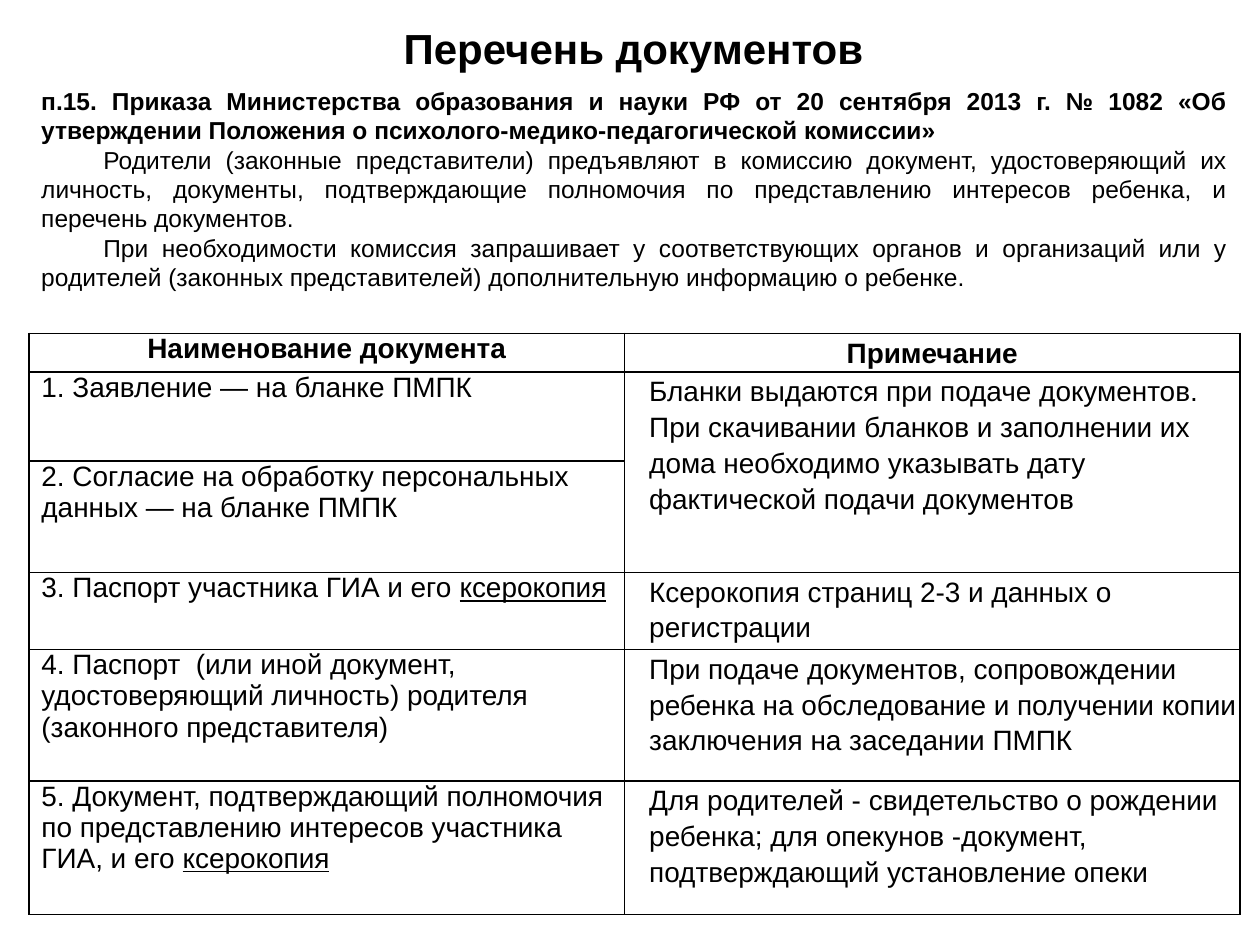
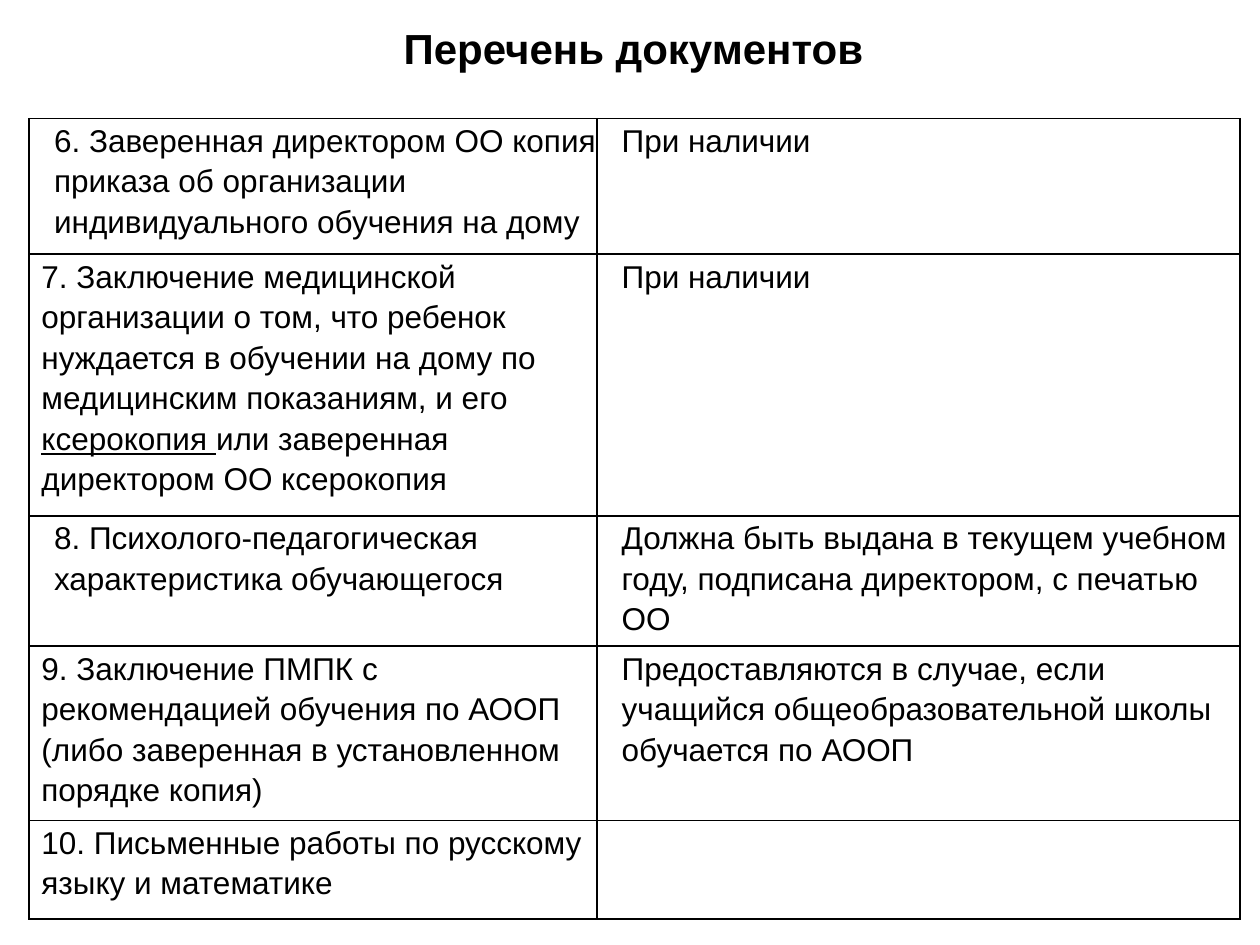
import pptx
import pptx.util
import pptx.dml.color
import pptx.enum.text
import pptx.oxml
import pptx.oxml.ns

Pt = pptx.util.Pt
ALIGN = pptx.enum.text.PP_ALIGN

COLORS = {"text": "000000", "border": "000000"}
FONT = "Arial"
TITLE = "Перечень документов"
LEFT, WIDTH = 16.5, 692
NAME_INDENT, DEEP_INDENT, NOTE_INDENT = 7.2, 14.4, 14
LINE_SPACING = 1.15

INTRO = [
    "п.15. Приказа Министерства образования и науки РФ от 20 сентября 2013 г. № 1082 "
    "«Об утверждении Положения о психолого-медико-педагогической комиссии» ",
    "Родители (законные представители) предъявляют в комиссию документ, удостоверяющий их личность, "
    "документы, подтверждающие полномочия по представлению интересов ребенка, и перечень документов.",
    "При необходимости комиссия запрашивает у соответствующих органов и организаций или у родителей "
    "(законных представителей) дополнительную информацию о ребенке.",
]

HEADER = ("Наименование документа", "Примечание")

# Text between bars is underlined; None continues the cell above.
MAIN_ROWS = [
    (51, NAME_INDENT, "1. Заявление — на бланке ПМПК",
     "Бланки выдаются при подаче документов. При скачивании бланков и заполнении "
     "их дома необходимо указывать дату фактической подачи документов"),
    (63.5, NAME_INDENT, "2. Согласие на обработку персональных данных — на бланке ПМПК", None),
    (41, NAME_INDENT, "3. Паспорт участника ГИА и его |ксерокопия|",
     "Ксерокопия страниц 2-3 и данных о регистрации"),
    (75, NAME_INDENT, "4. Паспорт  (или иной документ, удостоверяющий личность) родителя "
     "(законного представителя)",
     "При подаче документов, сопровождении ребенка на обследование и получении копии "
     "заключения на заседании ПМПК"),
    (76.5, NAME_INDENT, "5. Документ, подтверждающий полномочия по представлению интересов "
     "участника ГИА, и его |ксерокопия|",
     "Для родителей - свидетельство о рождении ребенка; для опекунов -документ, "
     "подтверждающий установление опеки"),
]

EXTRA_ROWS = [
    (77.5, DEEP_INDENT, "6. Заверенная директором ОО копия приказа об организации "
     "индивидуального обучения на дому", "При наличии"),
    (149.5, NAME_INDENT, "7. Заключение медицинской организации о том, что ребенок нуждается "
     "в обучении на дому по медицинским показаниям, и его |ксерокопия |или заверенная "
     "директором ОО ксерокопия", "При наличии"),
    (74.5, DEEP_INDENT, "8. Психолого-педагогическая характеристика обучающегося",
     "Должна быть выдана в текущем учебном году, подписана директором, с печатью ОО"),
    (99.5, NAME_INDENT, "9. Заключение ПМПК с рекомендацией обучения по АООП "
     "(либо заверенная в установленном порядке копия)",
     "Предоставляются в случае, если учащийся общеобразовательной школы обучается по АООП"),
    (56.5, NAME_INDENT, "10. Письменные работы по русскому языку и математике", ""),
]


def format_run(r, size, bold=False, underline=False):
    r.font.size = Pt(size)
    r.font.name = FONT
    r.font.bold = bold
    r.font.underline = underline
    r.font.color.rgb = pptx.dml.color.RGBColor.from_string(COLORS["text"])


def set_indent(p, left=0, first=0):
    pPr = p._p.get_or_add_pPr()
    pPr.set("marL", str(int(Pt(left))))
    pPr.set("indent", str(int(Pt(first))))


def add_text(s, box, paragraphs, size, align, first_indent=0):
    sp = s.shapes.add_textbox(*map(Pt, box))
    tf = sp.text_frame
    tf.word_wrap = True
    tf.auto_size = pptx.enum.text.MSO_AUTO_SIZE.SHAPE_TO_FIT_TEXT
    for i, text in enumerate(paragraphs):
        p = tf.add_paragraph() if i else tf.paragraphs[0]
        p.text = text
        p.alignment = align
        set_indent(p, first=first_indent if i else 0)
        for r in p.runs:
            format_run(r, size, bold=i == 0)


def set_borders(cell):
    tcPr = cell._tc.get_or_add_tcPr()
    for side in ("lnL", "lnR", "lnT", "lnB"):
        tcPr.append(pptx.oxml.parse_xml(
            f'<a:{side} {pptx.oxml.ns.nsdecls("a")} w="{int(Pt(1))}"><a:solidFill>'
            f'<a:srgbClr val="{COLORS["border"]}"/></a:solidFill></a:{side}>'))


def fill_cell(cell, text, size, indent, spacing, header=False):
    p = cell.text_frame.paragraphs[0]
    p.space_before = p.space_after = Pt(7.5)
    p.line_spacing = spacing
    p.alignment = ALIGN.CENTER if header else ALIGN.LEFT
    set_indent(p, indent)
    for i, part in enumerate(text.split("|")):
        if part:
            r = p.add_run()
            r.text = part
            format_run(r, size, bold=header, underline=i % 2 == 1)


def add_documents(s, top, columns, rows, size, name_spacing, header_height=0):
    if header_height:
        rows = [(header_height, 0, *HEADER)] + rows
    height = sum(row[0] for row in rows)
    table = s.shapes.add_table(len(rows), 2, Pt(LEFT), Pt(top), Pt(WIDTH), Pt(height)).table
    table.first_row = table.horz_banding = False
    for column, width in zip(table.columns, columns):
        column.width = Pt(width)
    for i, (row_height, indent, name, note) in enumerate(rows):
        header = bool(header_height) and i == 0
        table.rows[i].height = Pt(row_height)
        for j in range(2):
            cell = table.cell(i, j)
            cell.margin_left = cell.margin_right = cell.margin_top = cell.margin_bottom = 0
            set_borders(cell)
            cell.fill.background()
        fill_cell(table.cell(i, 0), name, size, indent, name_spacing, header)
        if note is None:
            table.cell(i - 1, 1).merge(table.cell(i, 1))
        else:
            fill_cell(table.cell(i, 1), note, size, 0 if header else NOTE_INDENT,
                      LINE_SPACING, header)


def add_slide(prs):
    s = prs.slides.add_slide(prs.slide_layouts[6])
    add_text(s, (101.5, 9.5, 521, 36), [TITLE], 24, ALIGN.CENTER)
    return s


def main():
    prs = pptx.Presentation()
    prs.slide_width, prs.slide_height = Pt(720), Pt(540)

    s = add_slide(prs)
    add_text(s, (LEFT, 45.5, WIDTH, 126), INTRO, 14, ALIGN.JUSTIFY, first_indent=35.5)
    add_documents(s, 190.5, (340.5, 351.5), MAIN_ROWS, 16, 1.0, header_height=20.5)

    s = add_slide(prs)
    add_documents(s, 67.75, (324.75, 367.25), EXTRA_ROWS, 18, LINE_SPACING)

    prs.save("out.pptx")


if __name__ == "__main__":
    main()
